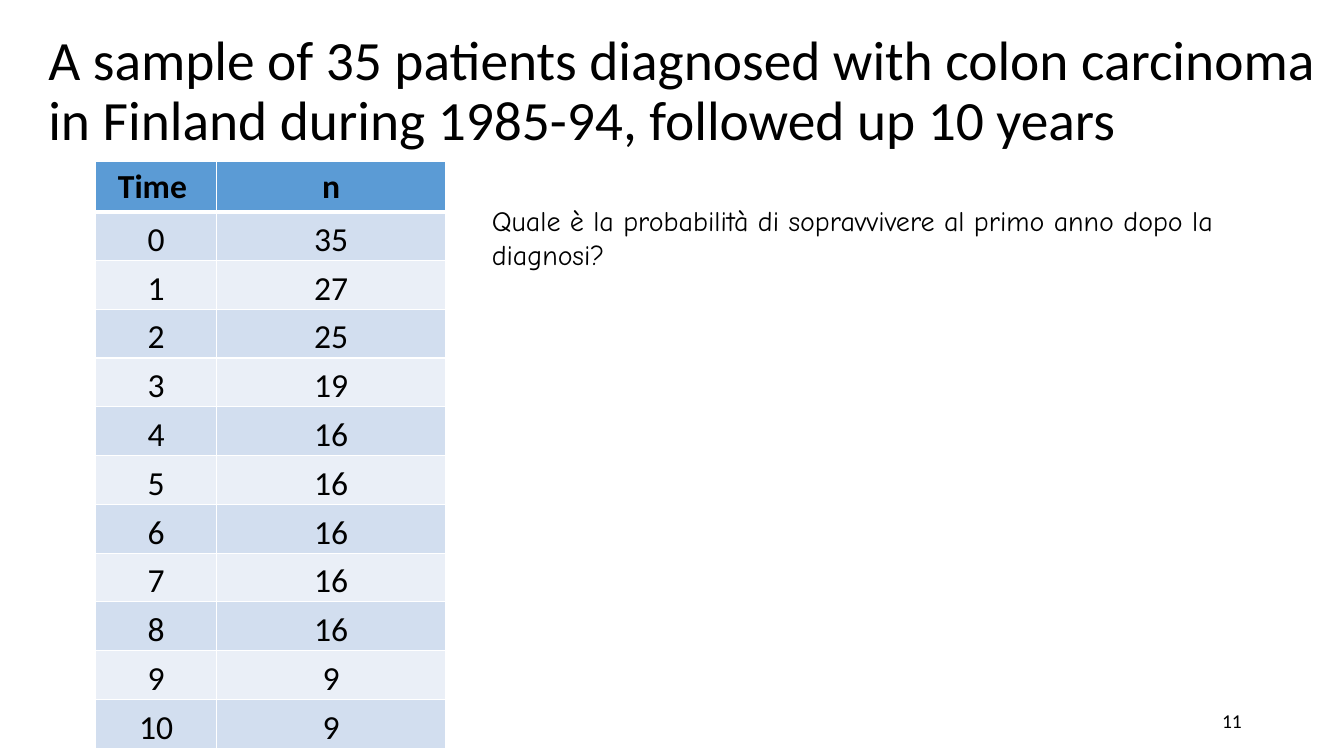
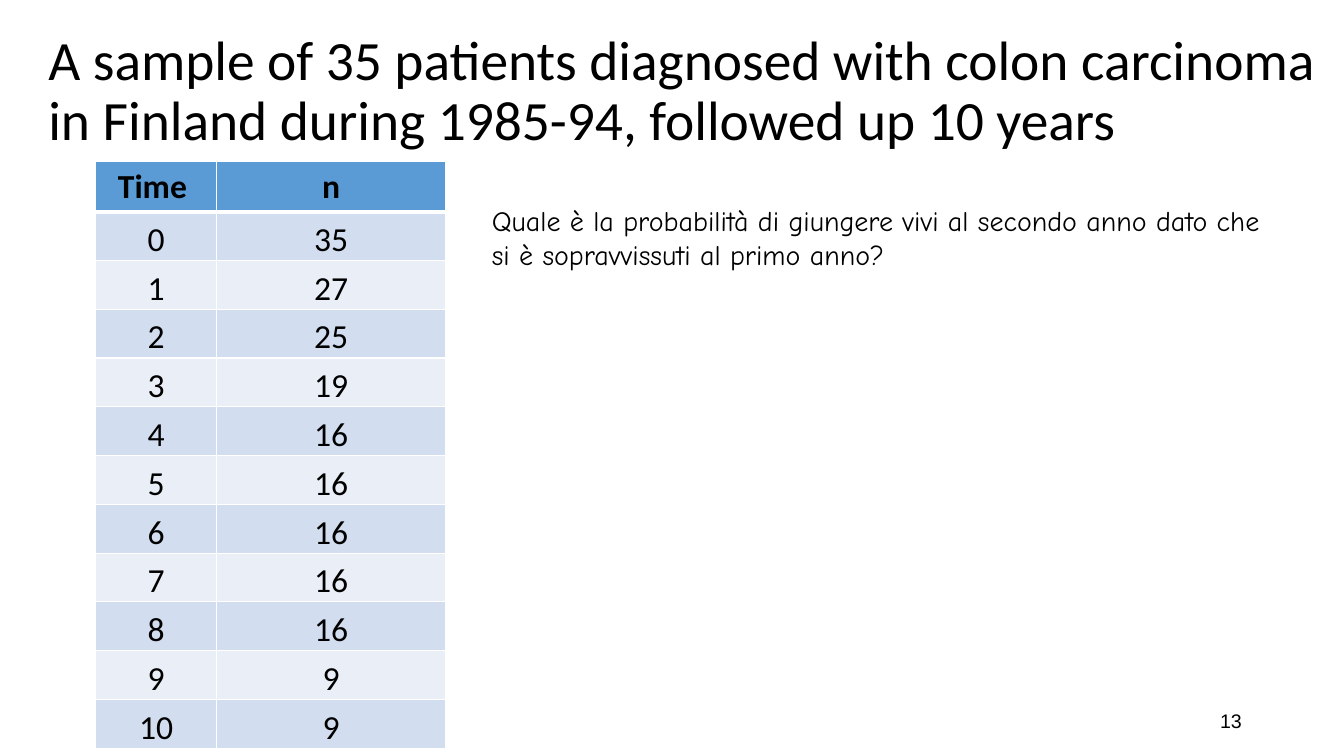
from dataclasses import dataclass

from lxml.etree import SubElement
from pptx import Presentation
from pptx.dml.color import RGBColor
from pptx.enum.text import MSO_ANCHOR, PP_ALIGN
from pptx.oxml.ns import qn
from pptx.slide import Slide
from pptx.table import _Cell
from pptx.util import Pt

COLORS = {
    "text": "000000",
    "border": "FFFFFF",
    "header": "5B9BD5",
    "odd_row": "D2DEEF",
    "even_row": "EAEFF7",
}
TITLE = (
    "A sample of 35 patients diagnosed with colon carcinoma "
    "in Finland during 1985-94, followed up 10 years"
)
HEADINGS = ("Time ", "n")
PATIENTS_BY_YEAR = (35, 27, 25, 19, 16, 16, 16, 16, 16, 9, 9)
COLUMN_WIDTHS = (86.4, 163.4)
HEADER_HEIGHT = 30
ROW_HEIGHT = 34.85


@dataclass(frozen=True)
class TextStyle:
    font: str
    size: float
    bold: bool = False
    align: PP_ALIGN = PP_ALIGN.LEFT
    anchor: MSO_ANCHOR = MSO_ANCHOR.TOP
    line_spacing: float = 1.0


@dataclass(frozen=True)
class Area:
    left: float
    top: float
    width: float
    height: float


@dataclass(frozen=True)
class CellStyle:
    text: TextStyle
    fill: str
    margins: tuple[float, float, float, float]
    top_border: float = 1
    bottom_border: float = 1


@dataclass(frozen=True)
class QuestionPage:
    question: str
    number: str
    number_font: str


TITLE_STYLE = TextStyle("Calibri", 39.6, anchor=MSO_ANCHOR.MIDDLE, line_spacing=0.9)
QUESTION_STYLE = TextStyle("Comic Neue", 20)
HEADING_STYLE = TextStyle("Calibri", 24, bold=True, align=PP_ALIGN.CENTER)
BODY_STYLE = TextStyle("Calibri", 24, align=PP_ALIGN.CENTER, anchor=MSO_ANCHOR.BOTTOM)

TITLE_AREA = Area(27.4, 4.3, 932.4, 123.8)
TABLE_AREA = Area(
    68.4, 115.2, sum(COLUMN_WIDTHS), HEADER_HEIGHT + ROW_HEIGHT * len(PATIENTS_BY_YEAR)
)
QUESTION_AREA = Area(344.2, 141.8, 573.8, 55.4)
NUMBER_AREA = Area(678.2, 500.4, 216, 28.8)

PAGES = (
    QuestionPage(
        "Quale è la probabilità di sopravvivere al primo anno dopo la diagnosi?",
        "11",
        "Calibri",
    ),
    QuestionPage(
        "Quale è la probabilità di giungere vivi al secondo anno dato che "
        "si è sopravvissuti al primo anno?",
        "13",
        "Arial",
    ),
)


def format_text(text_frame, text: str, style: TextStyle) -> None:
    text_frame.text = text
    para = text_frame.paragraphs[0]
    para.alignment = style.align
    para.line_spacing = style.line_spacing
    for span in para.runs:
        span.font.name = style.font
        span.font.size = Pt(style.size)
        span.font.bold = style.bold
        span.font.color.rgb = RGBColor.from_string(COLORS["text"])


def add_text(page: Slide, area: Area, text: str, style: TextStyle) -> None:
    box = page.shapes.add_textbox(
        Pt(area.left), Pt(area.top), Pt(area.width), Pt(area.height)
    )
    box.text_frame.word_wrap = True
    box.text_frame.vertical_anchor = style.anchor
    format_text(box.text_frame, text, style)


def add_borders(cell: _Cell, style: CellStyle) -> None:
    """Add the border lines, which must precede the fill in the cell's XML."""
    properties = cell._tc.get_or_add_tcPr()
    widths = {"lnL": 1, "lnR": 1, "lnT": style.top_border, "lnB": style.bottom_border}
    for side, width in widths.items():
        line = SubElement(properties, qn(f"a:{side}"), w=str(Pt(width)))
        fill = SubElement(line, qn("a:solidFill"))
        SubElement(fill, qn("a:srgbClr"), val=COLORS["border"])


def format_cell(cell: _Cell, text: str, style: CellStyle) -> None:
    add_borders(cell, style)
    cell.fill.solid()
    cell.fill.fore_color.rgb = RGBColor.from_string(COLORS[style.fill])
    left, top, right, bottom = style.margins
    cell.margin_left, cell.margin_top = Pt(left), Pt(top)
    cell.margin_right, cell.margin_bottom = Pt(right), Pt(bottom)
    cell.vertical_anchor = style.text.anchor
    format_text(cell.text_frame, text, style.text)


def cell_style(row: int) -> CellStyle:
    if row == 0:
        return CellStyle(HEADING_STYLE, "header", (7.2, 3.6, 7.2, 3.6), bottom_border=3)
    fill = "odd_row" if row % 2 else "even_row"
    top_border = 3 if row == 1 else 1
    return CellStyle(BODY_STYLE, fill, (0.7, 0.7, 0.7, 0), top_border=top_border)


def add_patient_table(page: Slide) -> None:
    rows = [HEADINGS, *enumerate(PATIENTS_BY_YEAR)]
    area = TABLE_AREA
    table = page.shapes.add_table(
        len(rows),
        len(HEADINGS),
        Pt(area.left),
        Pt(area.top),
        Pt(area.width),
        Pt(area.height),
    ).table
    for column, width in zip(table.columns, COLUMN_WIDTHS):
        column.width = Pt(width)
    for index, values in enumerate(rows):
        table.rows[index].height = Pt(ROW_HEIGHT if index else HEADER_HEIGHT)
        for cell, value in zip(table.rows[index].cells, values):
            format_cell(cell, str(value), cell_style(index))


def add_question_page(deck, content: QuestionPage) -> None:
    page = deck.slides.add_slide(deck.slide_layouts[6])
    number_style = TextStyle(
        content.number_font, 14, align=PP_ALIGN.RIGHT, anchor=MSO_ANCHOR.MIDDLE
    )
    add_text(page, TITLE_AREA, TITLE, TITLE_STYLE)
    add_patient_table(page)
    add_text(page, NUMBER_AREA, content.number, number_style)
    add_text(page, QUESTION_AREA, content.question, QUESTION_STYLE)


def main() -> None:
    deck = Presentation()
    deck.slide_width, deck.slide_height = Pt(960), Pt(540)
    for content in PAGES:
        add_question_page(deck, content)
    deck.save("out.pptx")


if __name__ == "__main__":
    main()
